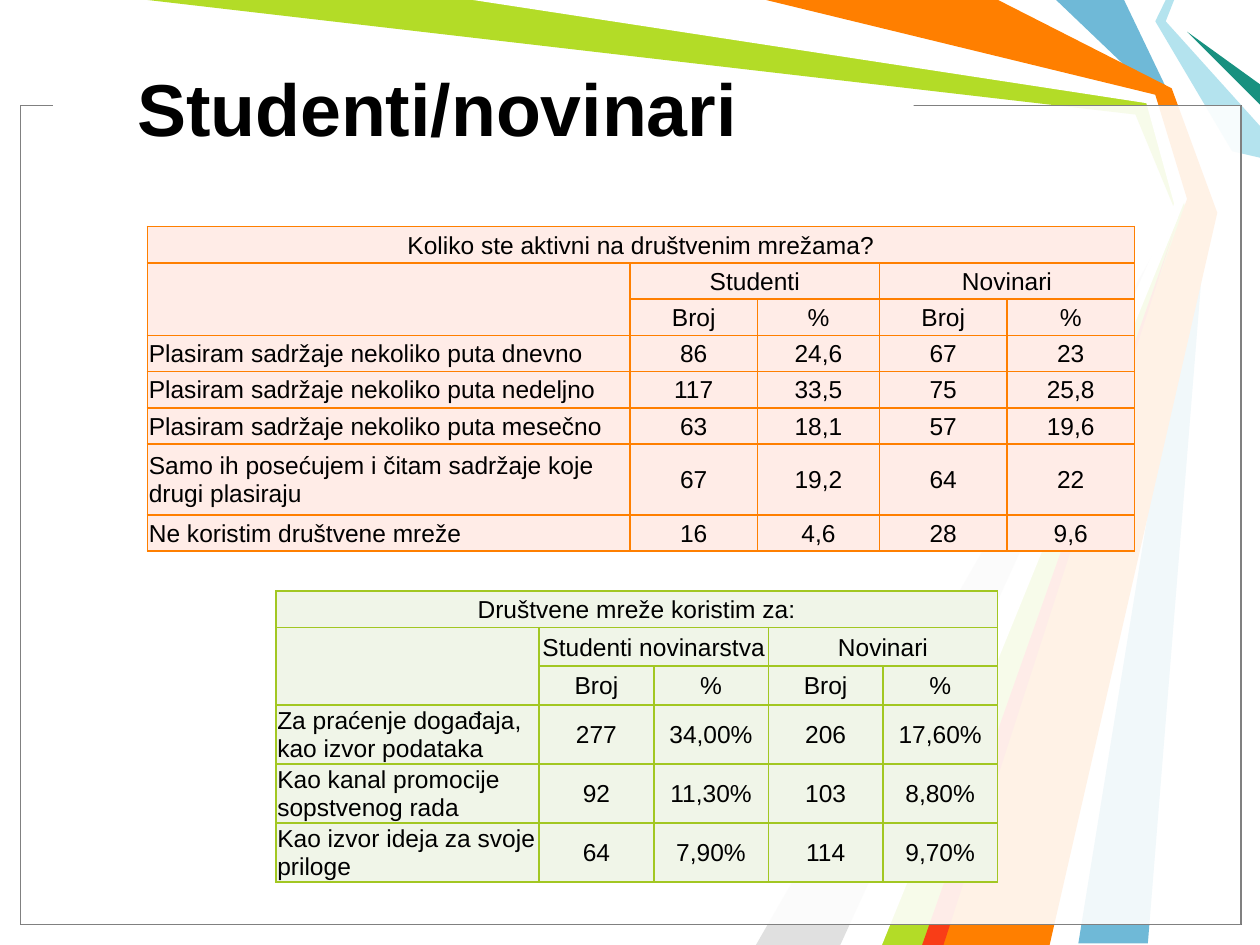
from lxml import etree
from pptx import Presentation
from pptx import util as u
from pptx.dml.color import RGBColor
from pptx.enum import shapes, text
from pptx.oxml.ns import qn

RIBBONS = [
    ("6FB9D7", [(22.66, 0), (23.6, 1.96), (24.33, 4.24), (23.14, 19.02),
                (21.74, 19.02), (24.13, 4.24), (23.29, 1.91), (21.29, 0)]),
    ("B3DC27", [(2.97, 0), (9.73, 0), (23.22, 1.98), (23.93, 4.29),
                (18.85, 19.05), (17.58, 19.05), (23.75, 4.39), (22.89, 2.31)]),
    ("E0E0E0", [(16.94, 19.05), (23.55, 4.6), (15.24, 19.05)]),
    ("FFFFFF", [(9.53, 0), (23.11, 2.08), (23.67, 4.11), (17.15, 19.05),
                (17.78, 19.05), (23.9, 4.01), (23.29, 1.91), (15.24, 0)]),
    ("B4E3EE", [(23.5, 0), (23.29, 0.43), (24.84, 3.05), (25.4, 3.18),
                (25.4, 2.54), (23.5, 0.43), (23.67, 0)]),
    ("189180", [(25.4, 2.11), (23.93, 0.64), (25.4, 1.7)]),
    ("FF7F00", [(15.44, 0), (20.12, 0), (23.62, 1.78), (24.54, 4.29),
                (21.16, 19.05), (18.62, 19.05), (23.93, 4.01), (23.29, 1.91)]),
    ("F93D17", [(18.59, 19.05), (23.67, 4.65), (19.02, 19.05)]),
]

ACTIVITY = [
    ["Koliko ste aktivni na društvenim mrežama?", "", "", "", ""],
    ["", "Studenti", "", "Novinari", ""],
    ["", "Broj", "%", "Broj", "%"],
    ["Plasiram sadržaje nekoliko puta dnevno", "86", "24,6", "67", "23"],
    ["Plasiram sadržaje nekoliko puta nedeljno", "117", "33,5", "75", "25,8"],
    ["Plasiram sadržaje nekoliko puta mesečno", "63", "18,1", "57", "19,6"],
    ["Samo ih posećujem i čitam sadržaje koje drugi plasiraju", "67", "19,2", "64", "22"],
    ["Ne koristim društvene mreže", "16", "4,6", "28", "9,6"],
]

PURPOSE = [
    ["Društvene mreže koristim za:", "", "", "", ""],
    ["", "Studenti novinarstva", "", "Novinari", ""],
    ["", "Broj", "%", "Broj", "%"],
    ["Za praćenje događaja, kao izvor podataka", "277", "34,00%", "206", "17,60%"],
    ["Kao kanal promocije sopstvenog rada", "92", "11,30%", "103", "8,80%"],
    ["Kao izvor ideja za svoje priloge", "64", "7,90%", "114", "9,70%"],
]


def rgb(color):
    """Turn a hex string into a colour."""
    return RGBColor.from_string(color)


def paint(sp, fill, line=None, opacity=100):
    """Set the fill, line and opacity of a shape and drop its shadow."""
    sp.shadow.inherit = False
    sp.fill.solid()
    sp.fill.fore_color.rgb = rgb(fill)
    if opacity < 100:
        clr = sp.fill._xPr.find(qn("a:solidFill"))[0]
        etree.SubElement(clr, qn("a:alpha")).set("val", str(opacity * 1000))
    if line:
        sp.line.color.rgb = rgb(line)
        sp.line.width = u.Pt(0.75)
    else:
        sp.line.fill.background()


def add_ribbons(s, left, top):
    """Draw the coloured ribbons from the given corner."""
    for color, points in RIBBONS:
        outline = [(u.Cm(left + x), u.Cm(top + y)) for x, y in points]
        fb = s.shapes.build_freeform(*outline[0])
        fb.add_line_segments(outline[1:], close=True)
        paint(fb.convert_to_shape(), color)


def add_frame(s, left, top, width, height):
    """Draw the translucent double frame and the gap behind the title."""
    for line in ("000000", "808080"):
        sp = s.shapes.add_shape(shapes.MSO_SHAPE.RECTANGLE, u.Cm(left), u.Cm(top),
                                u.Cm(width), u.Cm(height))
        paint(sp, "FFFFFF", line, 69)
    gap = s.shapes.add_shape(shapes.MSO_SHAPE.RECTANGLE, u.Cm(left + 0.66),
                             u.Cm(top - 0.25), u.Cm(17.35), u.Cm(0.43))
    paint(gap, "FFFFFF")


def add_title(s, title, left, top, width, height):
    """Place and format the title placeholder above the frame."""
    sp = s.shapes.title
    s.shapes._spTree.append(sp._element)
    sp.left, sp.top, sp.width, sp.height = map(u.Cm, (left, top, width, height))
    tf = sp.text_frame
    tf.text = title
    tf.word_wrap = True
    tf.vertical_anchor = text.MSO_ANCHOR.MIDDLE
    p = tf.paragraphs[0]
    p.alignment = text.PP_ALIGN.LEFT
    style(p, 42, True)


def style(p, size, bold=False):
    """Format the runs of a paragraph."""
    for r in p.runs:
        r.font.name = "Arial"
        r.font.size = u.Pt(size)
        r.font.bold = bold
        r.font.color.rgb = rgb("000000")


def format_cell(cell, fill, border, centred):
    """Set the borders, fill, margins and text format of a cell."""
    tc_pr = cell._tc.get_or_add_tcPr()
    for side in ("lnL", "lnR", "lnT", "lnB"):
        ln = etree.SubElement(tc_pr, qn("a:" + side), w=str(u.Pt(1)))
        solid = etree.SubElement(ln, qn("a:solidFill"))
        etree.SubElement(solid, qn("a:srgbClr"), val=border)
    cell.fill.solid()
    cell.fill.fore_color.rgb = rgb(fill)
    cell.margin_left = cell.margin_right = cell.margin_top = u.Cm(0.03)
    cell.margin_bottom = 0
    cell.vertical_anchor = text.MSO_ANCHOR.MIDDLE
    p = cell.text_frame.paragraphs[0]
    p.alignment = text.PP_ALIGN.CENTER if centred else text.PP_ALIGN.LEFT
    style(p, 14)


def add_survey_table(s, left, top, data, cols, rows, fill, border):
    """Add a survey table with a title row and two grouped column pairs."""
    tbl = s.shapes.add_table(len(rows), len(cols), u.Cm(left), u.Cm(top),
                             u.Cm(sum(cols)), u.Cm(sum(rows))).table
    tbl.first_row = tbl.horz_banding = False
    for col, width in zip(tbl.columns, cols):
        col.width = u.Cm(width)
    for i, (row, height) in enumerate(zip(tbl.rows, rows)):
        row.height = u.Cm(height)
        for j, cell in enumerate(row.cells):
            cell.text = data[i][j]
            format_cell(cell, fill, border, i < 3 or j > 0)
    for first, last in (((0, 0), (0, 4)), ((1, 0), (2, 0)),
                        ((1, 1), (1, 2)), ((1, 3), (1, 4))):
        tbl.cell(*first).merge(tbl.cell(*last))


def main():
    """Build the slide and save it."""
    prs = Presentation()
    prs.slide_width, prs.slide_height = u.Cm(25.4), u.Cm(19.05)
    s = prs.slides.add_slide(prs.slide_layouts[5])
    add_ribbons(s, 0, 0)
    add_frame(s, 0.41, 2.13, 24.61, 16.51)
    add_title(s, "Studenti/novinari", 2.51, 0.56, 17.5, 3.18)
    add_survey_table(s, 5.56, 11.91, PURPOSE, [5.31] + [2.31] * 4,
                     [0.74] + [0.78] * 2 + [1.19] * 3, "F0F5E8", "A2C722")
    add_survey_table(s, 2.97, 4.57, ACTIVITY, [9.73, 2.57, 2.46, 2.57, 2.57],
                     [0.73] * 6 + [1.43, 0.73], "FFECE7", "FF7F00")
    prs.save("out.pptx")


if __name__ == "__main__":
    main()
